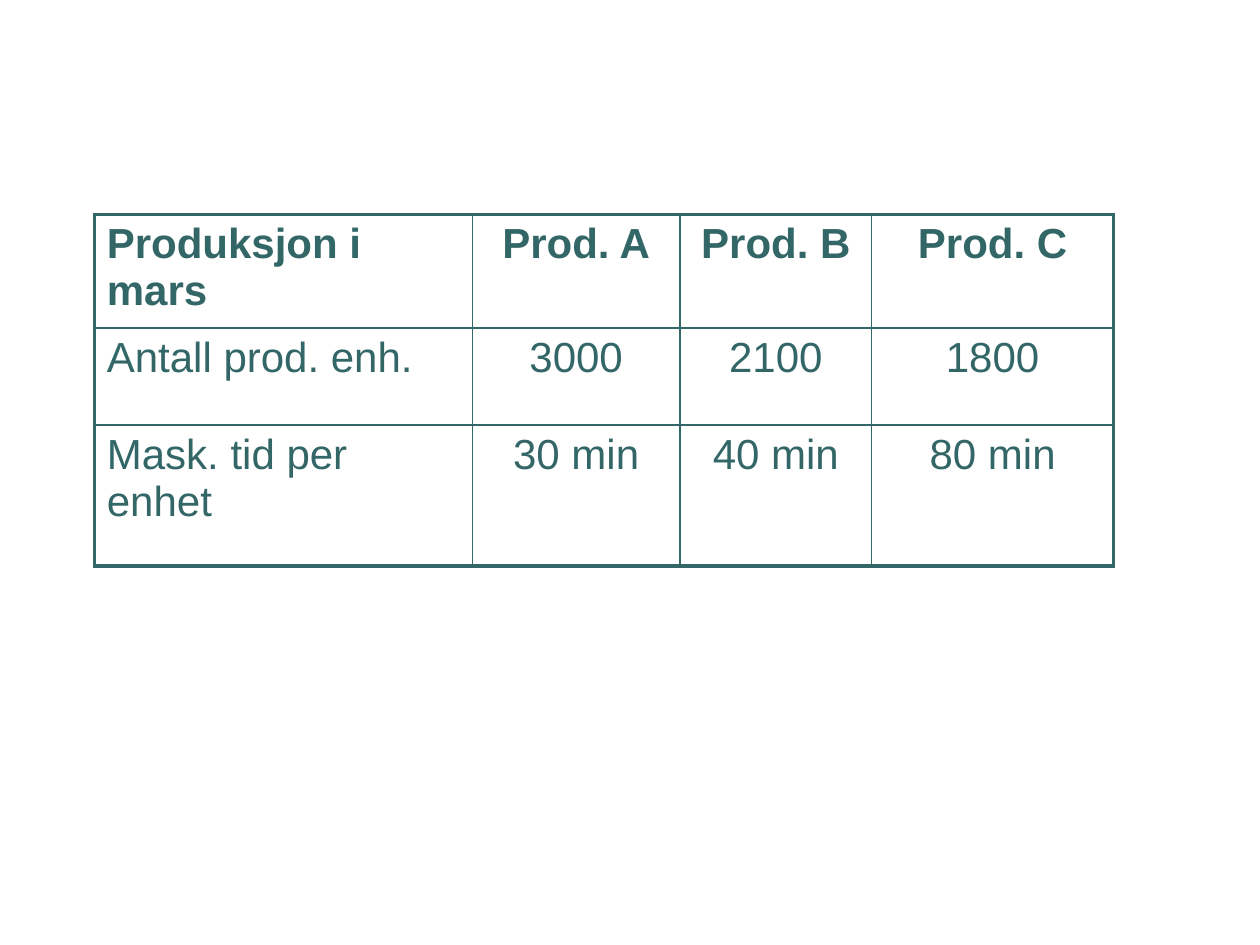
from lxml.etree import SubElement
from pptx import Presentation
from pptx.dml.color import RGBColor
from pptx.enum.text import PP_ALIGN
from pptx.oxml.ns import qn
from pptx.util import Cm, Pt

TEAL = RGBColor(0x33, 0x66, 0x66)
OUTER, INNER = Pt(2.25), Pt(1)

PRODUCTION = [
    ["Produksjon i mars", "Prod. A", "Prod. B", "Prod. C"],
    ["Antall prod. enh.", "3000", "2100", "1800"],
    ["Mask. tid per enhet", "30 min", "40 min", "80 min"],
]
COLUMN_WIDTHS = [7.62, 4.19, 3.86, 4.88]
ROW_HEIGHTS = [2.29, 1.96, 2.84]


def write(frame, text, *, font, size, color, bold=False, align=PP_ALIGN.LEFT):
    paragraph = frame.paragraphs[0]
    paragraph.alignment = align
    run = paragraph.add_run()
    run.text = text
    run.font.name = font
    run.font.size = Pt(size)
    run.font.bold = bold
    run.font.color.rgb = color


def set_border(cell, side, width, color):
    """Draw one cell border; call in the order L, R, T, B, before the fill."""
    line = SubElement(cell._tc.get_or_add_tcPr(), qn(f"a:ln{side}"), w=str(width))
    SubElement(SubElement(line, qn("a:solidFill")), qn("a:srgbClr"), val=str(color))


class SlideBuilder:
    def __init__(self, slide, font="Arial", size=24, color=TEAL):
        self.slide = slide
        self.font = font
        self.size = size
        self.color = color

    def table(self, rows, left, top, widths, heights):
        """Add a ruled table with a bold heading row and a heavy outer frame."""
        table = self.slide.shapes.add_table(
            len(rows), len(widths), Cm(left), Cm(top),
            Cm(sum(widths)), Cm(sum(heights))).table
        table.first_row = table.horz_banding = False
        for column, width in zip(table.columns, widths):
            column.width = Cm(width)
        for row, height in zip(table.rows, heights):
            row.height = Cm(height)

        last_row, last_column = len(rows) - 1, len(widths) - 1
        for r, values in enumerate(rows):
            for c, value in enumerate(values):
                cell = table.cell(r, c)
                on_frame = {"L": c == 0, "R": c == last_column,
                            "T": r == 0, "B": r == last_row}
                for side, outer in on_frame.items():
                    set_border(cell, side, OUTER if outer else INNER, self.color)
                cell.fill.background()
                write(cell.text_frame, value, font=self.font, size=self.size,
                      color=self.color, bold=r == 0,
                      align=PP_ALIGN.CENTER if c else PP_ALIGN.LEFT)


def main():
    presentation = Presentation()
    presentation.slide_width, presentation.slide_height = Cm(25.4), Cm(19.05)
    blank_layout = presentation.slide_layouts[6]
    builder = SlideBuilder(presentation.slides.add_slide(blank_layout))
    builder.table(PRODUCTION, 1.9, 4.32, COLUMN_WIDTHS, ROW_HEIGHTS)
    presentation.save("out.pptx")


if __name__ == "__main__":
    main()
